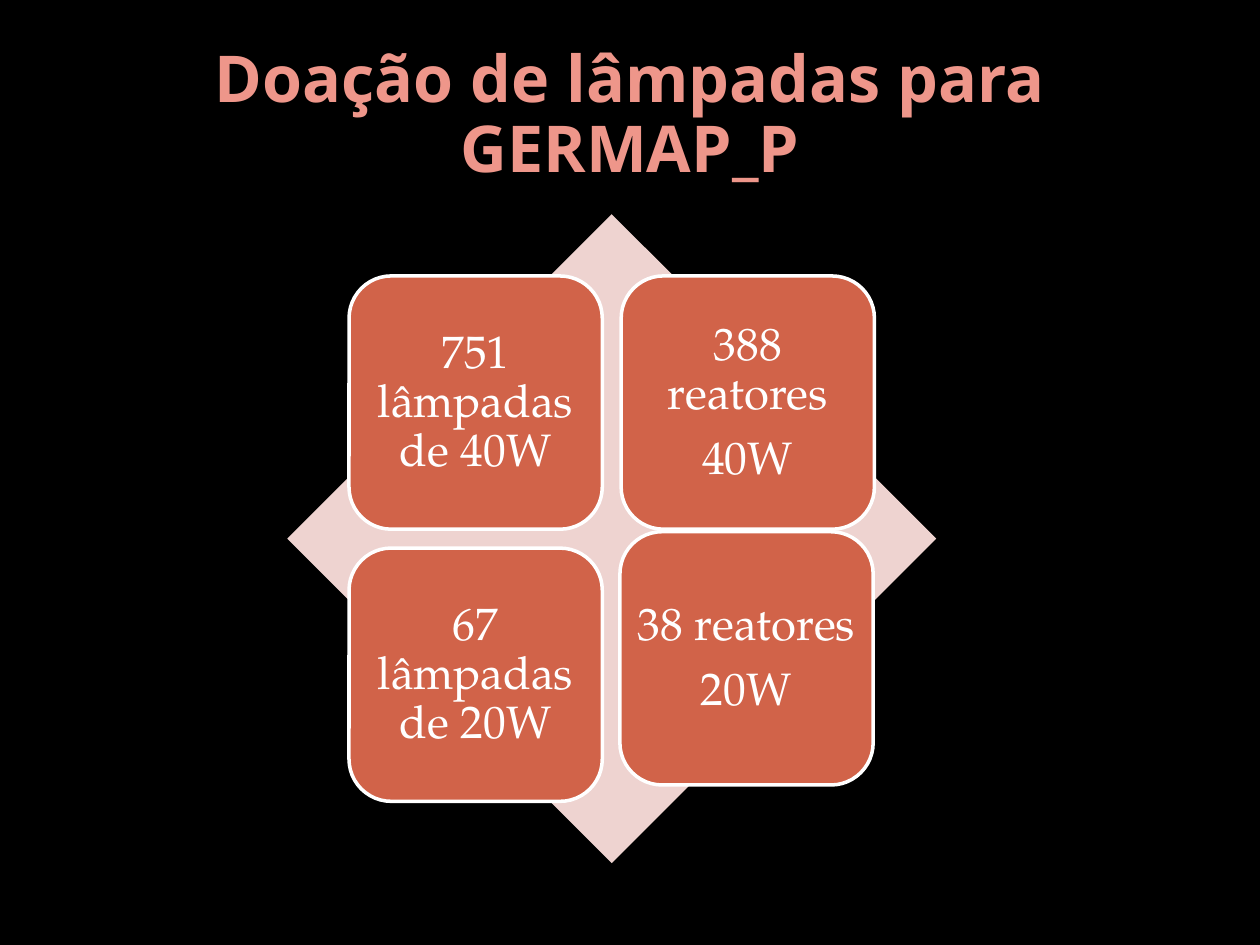
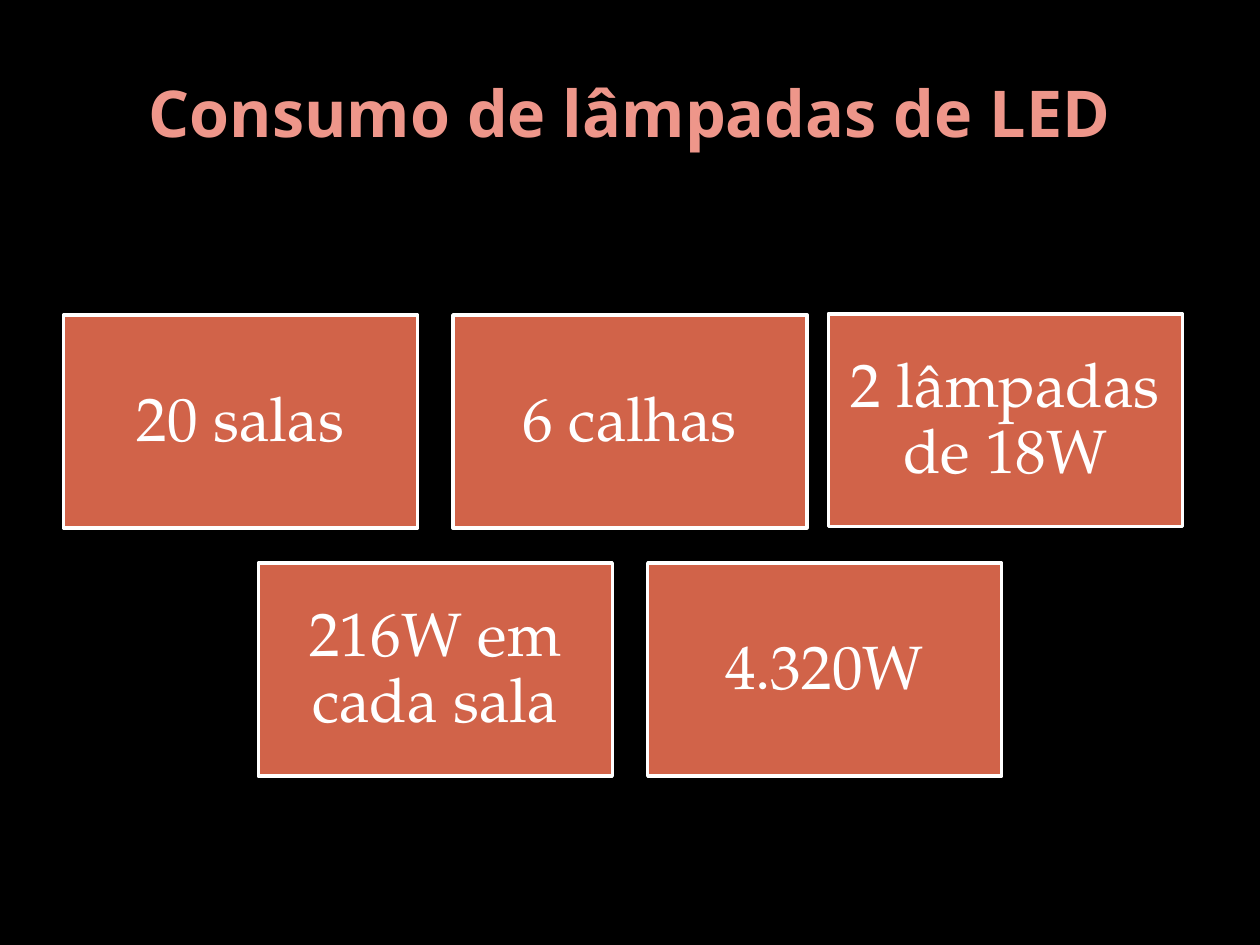
from dataclasses import dataclass

from pptx import Presentation
from pptx.dml.color import RGBColor
from pptx.enum.shapes import MSO_SHAPE
from pptx.enum.text import MSO_ANCHOR, MSO_AUTO_SIZE, PP_ALIGN
from pptx.util import Inches, Pt

DIAMOND, ROUNDED, RECT = MSO_SHAPE.DIAMOND, MSO_SHAPE.ROUNDED_RECTANGLE, MSO_SHAPE.RECTANGLE
MIDDLE, CENTER, NO_FIT = MSO_ANCHOR.MIDDLE, PP_ALIGN.CENTER, MSO_AUTO_SIZE.NONE

# Content: each row is a list of boxes, each box a list of paragraphs;
# nudges move single boxes off the grid, keyed by (row, column)
DONATION = {
    "title": "Doação de lâmpadas para GERMAP_P",
    "rows": [
        [["751 lâmpadas de 40W"], ["388 reatores", "40W"]],
        [["67 lâmpadas de 20W"], ["38 reatores", "20W"]],
    ],
    "nudges": {(1, 1): (-0.01, -0.13)},
}
CONSUMPTION = {
    "title": "Consumo de lâmpadas de LED",
    "rows": [
        [["20 salas"], ["6 calhas"], ["2 lâmpadas de 18W"]],
        [["216W em cada sala"], ["4.320W"]],
    ],
    "nudges": {(0, 2): (-0.11, -0.01)},
}


# Theme
@dataclass(frozen=True)
class Theme:
    background: RGBColor = RGBColor.from_string("000000")
    title: RGBColor = RGBColor.from_string("EE968A")
    box: RGBColor = RGBColor.from_string("D16349")
    diamond: RGBColor = RGBColor.from_string("EED3D0")
    white: RGBColor = RGBColor.from_string("FFFFFF")
    title_font: str = "Noto Sans"
    body_font: str = "TeX Gyre Pagella"
    title_size: float = 36.9
    matrix_size: float = 26
    block_size: float = 35
    outline: float = 2


THEME = Theme()

# Layout, in inches
SLIDE_W, SLIDE_H = 10, 7.5
TITLE_AT = (0.5, 0.3, 9, 1.25)
DIAMOND_AT = (2.28, 1.7, 5.15, 5.15)
# The rounded corners already inset the text, so the matrix margin is small
MATRIX = dict(shape=ROUNDED, center=4.855, top=2.19, w=2.01, h=2.01,
              gap=0.15, margin=0.01, size=THEME.matrix_size)
BLOCKS = dict(shape=RECT, center=SLIDE_W / 2, top=2.5, w=2.81, h=1.69,
              gap=0.28, margin=0.15, size=THEME.block_size)


# Helpers
def set_attrs(obj, values):
    for name, value in values.items():
        setattr(obj, name, value)


def write(tf, paragraphs, margin, para_format, font_format, color):
    sides = ("margin_left", "margin_top", "margin_right", "margin_bottom")
    set_attrs(tf, dict.fromkeys(sides, Inches(margin)))
    set_attrs(tf, dict(word_wrap=True, auto_size=NO_FIT, vertical_anchor=MIDDLE))
    for i, text in enumerate(paragraphs):
        p = tf.add_paragraph() if i else tf.paragraphs[0]
        set_attrs(p, dict(alignment=CENTER, line_spacing=0.9, **para_format))
        r = p.add_run()
        r.text = text
        set_attrs(r.font, font_format)
        r.font.color.rgb = color


def add_shape(slide, kind, at, fill):
    sp = slide.shapes.add_shape(kind, *map(Inches, at))
    sp.shadow.inherit = False
    sp.fill.solid()
    sp.fill.fore_color.rgb = fill
    sp.line.fill.background()
    return sp


def add_box(slide, grid, left, top, paragraphs):
    sp = add_shape(slide, grid["shape"], (left, top, grid["w"], grid["h"]), THEME.box)
    sp.line.color.rgb = THEME.white
    sp.line.width = Pt(THEME.outline)
    size = grid["size"]
    write(sp.text_frame, paragraphs, grid["margin"],
          dict(space_after=Pt(round(0.35 * size))),
          dict(name=THEME.body_font, size=Pt(size)), THEME.white)


def add_grid(slide, content, grid):
    """Place rows of equal boxes, each row centred on the same axis."""
    for row, boxes in enumerate(content["rows"]):
        pitch = grid["w"] + grid["gap"]
        start = grid["center"] - (len(boxes) * pitch - grid["gap"]) / 2
        top = grid["top"] + row * (grid["h"] + grid["gap"])
        for col, paragraphs in enumerate(boxes):
            dx, dy = content["nudges"].get((row, col), (0, 0))
            add_box(slide, grid, start + col * pitch + dx, top + dy, paragraphs)


def add_titled_slide(prs, title):
    slide = prs.slides.add_slide(prs.slide_layouts[5])
    sp = slide.shapes.title
    set_attrs(sp, dict(zip(("left", "top", "width", "height"), map(Inches, TITLE_AT))))
    write(sp.text_frame, [title], 0.05, {},
          dict(name=THEME.title_font, size=Pt(THEME.title_size), bold=True), THEME.title)
    return slide


def main():
    prs = Presentation()
    prs.slide_width, prs.slide_height = Inches(SLIDE_W), Inches(SLIDE_H)
    fill = prs.slide_master.background.fill
    fill.solid()
    fill.fore_color.rgb = THEME.background

    # Donated lamps: four boxes over a diamond
    slide = add_titled_slide(prs, DONATION["title"])
    add_shape(slide, DIAMOND, DIAMOND_AT, THEME.diamond)
    add_grid(slide, DONATION, MATRIX)

    # LED consumption: rows of three and two blocks
    slide = add_titled_slide(prs, CONSUMPTION["title"])
    add_grid(slide, CONSUMPTION, BLOCKS)

    prs.save("out.pptx")


if __name__ == "__main__":
    main()
